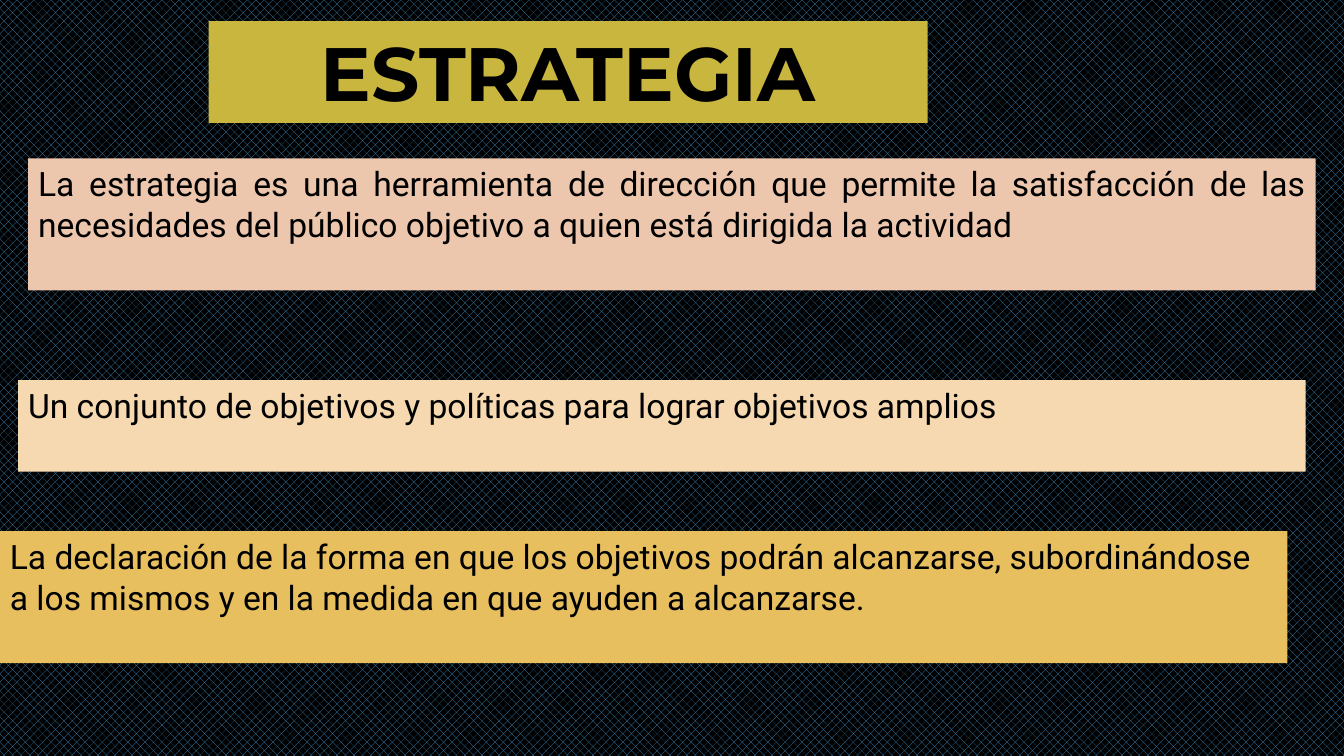
from dataclasses import dataclass

from lxml.etree import SubElement
from pptx import Presentation
from pptx.dml.color import RGBColor
from pptx.dml.fill import FillFormat
from pptx.enum.dml import MSO_PATTERN
from pptx.enum.text import MSO_ANCHOR, MSO_AUTO_SIZE, PP_ALIGN
from pptx.oxml.ns import qn
from pptx.shapes.autoshape import Shape
from pptx.slide import Slide
from pptx.text.text import Font
from pptx.util import Inches, Pt

BLACK = "000000"


@dataclass(frozen=True)
class Panel:
    left: float
    top: float
    width: float
    height: float
    fill: str
    text: str
    align: PP_ALIGN = PP_ALIGN.LEFT
    font: str = "Roboto"
    size: int = 24


TITLE = Panel(2.07, 0.21, 7.13, 1.01, "C9B63F", "ESTRATEGIA",
              PP_ALIGN.CENTER, "Montserrat", 54)
DEFINITIONS = (
    Panel(0.28, 1.57, 12.77, 1.31, "ECC6AD",
          "La estrategia es una herramienta de dirección que permite la satisfacción "
          "de las necesidades del público objetivo a quien está dirigida la actividad",
          PP_ALIGN.JUSTIFY),
    Panel(0.18, 3.77, 12.77, 0.91, "F6D9B0",
          "Un conjunto de objetivos y políticas para lograr objetivos amplios"),
    Panel(0, 5.27, 12.77, 1.31, "E7BF5F",
          "La declaración de la forma en que los objetivos podrán alcanzarse, "
          "subordinándose a los mismos y en la medida en que ayuden a alcanzarse."),
)


def color(value: str) -> RGBColor:
    return RGBColor.from_string(value)


def set_pattern(fill: FillFormat, preset: str, front: str, back: str) -> None:
    """Fill with a pattern given by its preset name in DrawingML."""
    fill.patterned()
    fill.pattern = MSO_PATTERN.from_xml(preset)
    fill.fore_color.rgb = color(front)
    fill.back_color.rgb = color(back)


def outline_text(font: Font, value: str, width: float) -> None:
    """Add an outline to the letters; it must precede the fill in the XML."""
    properties = font._element
    line = SubElement(properties, qn("a:ln"), w=str(Pt(width)))
    solid = SubElement(line, qn("a:solidFill"))
    SubElement(solid, qn("a:srgbClr"), val=value)
    properties.insert(0, line)


def format_panel(box: Shape, panel: Panel) -> Font:
    """Place, fill and write the box, and return the font of its text."""
    box.left, box.top = Inches(panel.left), Inches(panel.top)
    box.width, box.height = Inches(panel.width), Inches(panel.height)
    box.fill.solid()
    box.fill.fore_color.rgb = color(panel.fill)
    frame = box.text_frame
    frame.text = panel.text
    frame.word_wrap = True
    frame.auto_size = MSO_AUTO_SIZE.NONE
    frame.vertical_anchor = MSO_ANCHOR.TOP
    para = frame.paragraphs[0]
    para.alignment = panel.align
    font = para.runs[0].font
    font.name = panel.font
    font.size = Pt(panel.size)
    font.color.rgb = color(BLACK)
    return font


def add_title(slide: Slide) -> None:
    font = format_panel(slide.shapes.title, TITLE)
    font.bold = True
    set_pattern(font.fill, "ltDnDiag", "F2C688", BLACK)
    outline_text(font, "E9A039", 1)


def add_definition(slide: Slide, panel: Panel) -> None:
    box = slide.shapes.add_textbox(0, 0, 0, 0)
    format_panel(box, panel)


def main() -> None:
    deck = Presentation()
    deck.slide_width, deck.slide_height = Inches(13.33), Inches(7.5)
    page = deck.slides.add_slide(deck.slide_layouts.get_by_name("Title Only"))
    set_pattern(page.background.fill, "pct40", "4597CF", BLACK)
    add_title(page)
    for panel in DEFINITIONS:
        add_definition(page, panel)
    deck.save("out.pptx")


if __name__ == "__main__":
    main()
